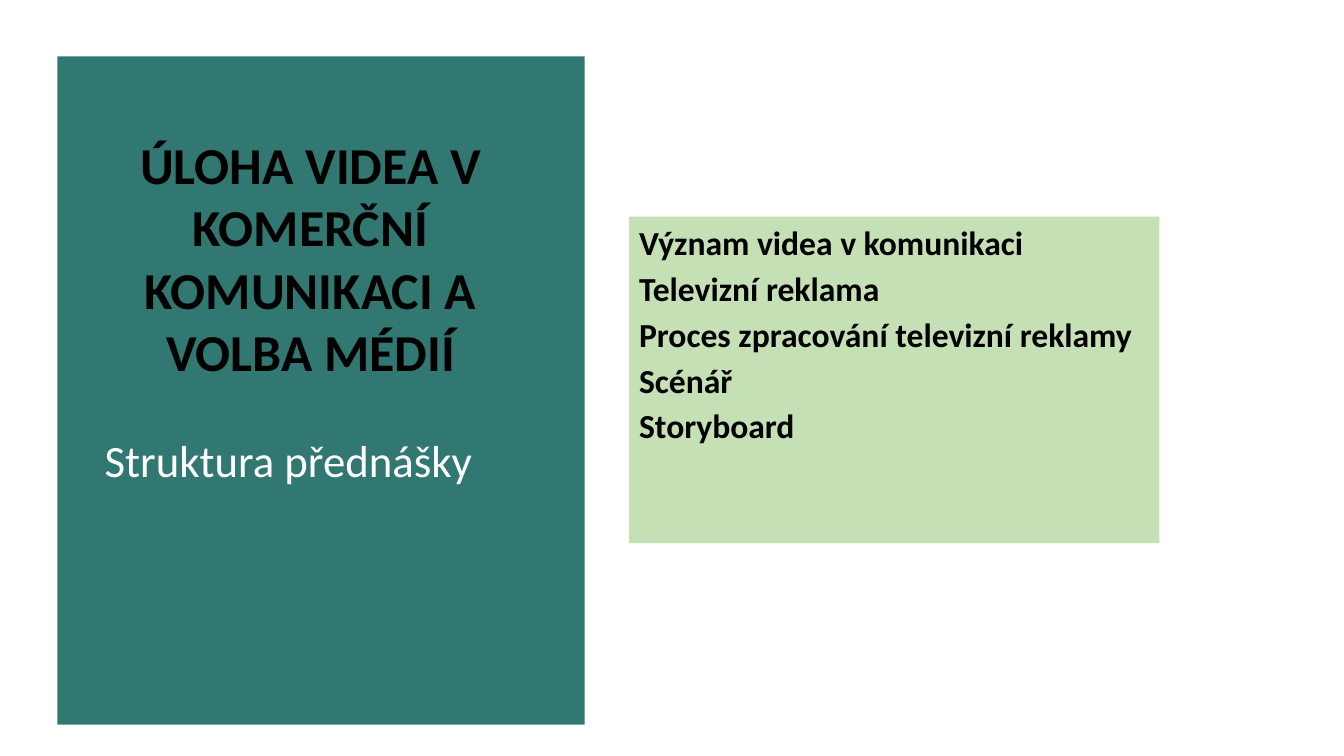
"""Build the lecture outline slide on video in commercial communication."""
import pptx
import pptx.dml.color
import pptx.enum.shapes
import pptx.enum.text
import pptx.util

Inches = pptx.util.Inches
Pt = pptx.util.Pt
ALIGN = pptx.enum.text.PP_ALIGN
ANCHOR = pptx.enum.text.MSO_ANCHOR

TEAL = pptx.dml.color.RGBColor(0x30, 0x78, 0x71)
LIGHT_GREEN = pptx.dml.color.RGBColor(0xC5, 0xE0, 0xB4)
BLACK = pptx.dml.color.RGBColor(0x00, 0x00, 0x00)
WHITE = pptx.dml.color.RGBColor(0xFF, 0xFF, 0xFF)

TOPICS = [
    "Význam videa v komunikaci",
    "Televizní reklama",
    "Proces zpracování televizní reklamy",
    "Scénář",
    "Storyboard",
]


class OutlineSlide:
    font_name = "Calibri"

    def __init__(self, presentation):
        self.slide = presentation.slides.add_slide(presentation.slide_layouts[5])

    def add_lines(self, shape, lines, size, color, bold=False, align=ALIGN.LEFT, gap=0):
        frame = shape.text_frame
        frame.word_wrap = True
        frame.auto_size = pptx.enum.text.MSO_AUTO_SIZE.NONE
        frame.vertical_anchor = ANCHOR.TOP
        for index, line in enumerate(lines):
            paragraph = frame.add_paragraph() if index else frame.paragraphs[0]
            paragraph.alignment = align
            paragraph.space_before = Pt(gap if index else 0)
            run = paragraph.add_run()
            run.text = line
            run.font.name = self.font_name
            run.font.size = Pt(size)
            run.font.bold = bold
            run.font.color.rgb = color

    def title(self, left, top, width, height, text, size, color):
        heading = self.slide.shapes.title
        heading.left, heading.top = Inches(left), Inches(top)
        heading.width, heading.height = Inches(width), Inches(height)
        self.add_lines(heading, [text], size, color, bold=True, align=ALIGN.CENTER)

    def panel(self, left, top, width, height, fill):
        block = self.slide.shapes.add_shape(
            pptx.enum.shapes.MSO_SHAPE.RECTANGLE,
            Inches(left), Inches(top), Inches(width), Inches(height))
        block.shadow.inherit = False
        block.fill.solid()
        block.fill.fore_color.rgb = fill
        block.line.fill.background()
        return block

    def backdrop(self, left, top, width, height, fill):
        block = self.panel(left, top, width, height, fill)
        self.slide.shapes.title.element.addprevious(block.element)

    def label(self, left, top, width, height, text, size, color):
        box = self.slide.shapes.add_textbox(
            Inches(left), Inches(top), Inches(width), Inches(height))
        self.add_lines(box, [text], size, color)


def main():
    presentation = pptx.Presentation()
    presentation.slide_width = Inches(13.33)
    presentation.slide_height = Inches(7.5)

    outline = OutlineSlide(presentation)
    outline.backdrop(0.57, 0.56, 5.23, 6.63, TEAL)
    outline.title(0.73, 1.27, 4.7, 2.5,
                  "ÚLOHA VIDEA V KOMERČNÍ KOMUNIKACI A VOLBA MÉDIÍ", 37, BLACK)
    topics = outline.panel(6.24, 2.15, 5.26, 3.24, LIGHT_GREEN)
    outline.add_lines(topics, TOPICS, 24, BLACK, bold=True, gap=4)
    outline.label(0.94, 4.24, 3.94, 0.64, "Struktura přednášky", 32, WHITE)

    presentation.save("out.pptx")


if __name__ == "__main__":
    main()
